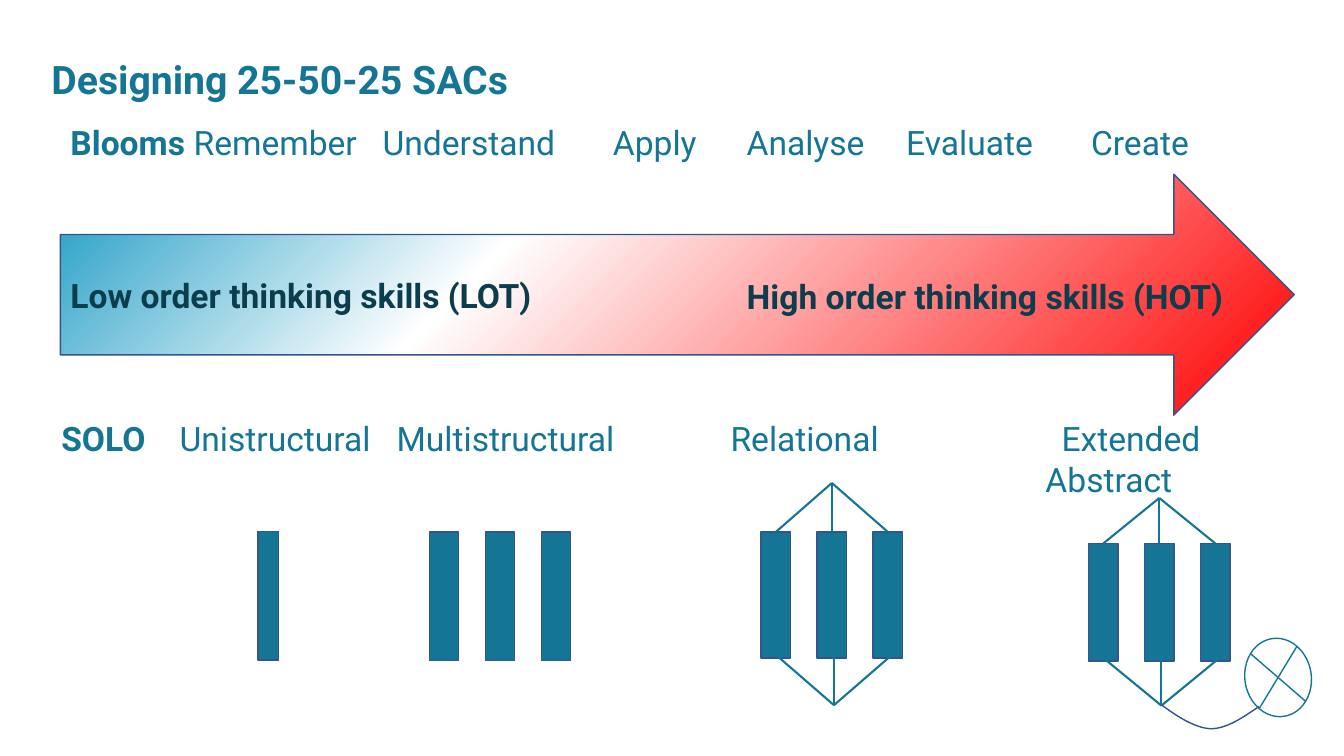
from copy import deepcopy

from lxml.etree import SubElement
from pptx import Presentation
from pptx.dml.color import RGBColor
from pptx.enum.shapes import MSO_CONNECTOR, MSO_SHAPE as SHAPE
from pptx.enum.text import MSO_ANCHOR, PP_ALIGN
from pptx.oxml.ns import qn
from pptx.util import Pt

FONT = "Roboto"
C = {"teal": "147694", "dark": "0B3D4D", "edge": "325491",
     "white": "FFFFFF", "blue": "1B9BC3", "red": "FF0000"}

TITLE = "Designing 25-50-25 SACs"
ARROW = (43.2, 124.5, 881.3, 172)
ARROW_STOPS = [(0, "blue"), (0.35, "white"), (1, "red")]
ARROW_LABELS = [("Low order thinking skills (LOT)", (43.2, 193, 371.5, 36)),
                ("High order thinking skills (HOT)", (526.3, 193.7, 380, 36))]

# Each line: bold heading, then (word, tab stop)
TAXONOMIES = [
    ((43.2, 83.5, 887, 65.5), [
        ("Blooms", [("Remember", 88), ("Understand", 223), ("Apply", 387.5),
                    ("Analyse", 483), ("Evaluate", 597), ("Create", 729)])]),
    ((36.7, 295.2, 863.3, 65.5), [
        ("SOLO", [("Unistructural", 84.5), ("Multistructural", 239.5),
                  ("Relational", 478), ("Extended", 714.5)]),
        ("", [("Abstract", 703)])]),
]

BAR_W, BAR_PITCH = 21, 40
UNISTRUCTURAL = (184.4, 379.5, 14.4, 92)
MULTISTRUCTURAL = (306.7, 380, 92)  # left, top, bar height
# left, top, bar height, apex y, foot y
LINKED = [(543.7, 380, 90, 345, 503.7), (777.6, 388.2, 84, 355.7, 504)]
FOOT_SHIFT = 1.5
TAIL = [[(899.3, 504.7), (887.8, 512.6), (876.2, 520.6), (864.7, 520.6)],
        [(864.7, 520.6), (853.2, 519.8), (841, 511.9), (829.4, 503.3)]]
TAIL_STEPS = 16
JUNCTION = (889.2, 455.8, 47.5, 56.2)


def rgb(name):
    return RGBColor.from_string(C[name])


def add_run(p, text, size=24, color="teal", bold=False):
    r = p.add_run()
    r.text = text
    r.font.name, r.font.size, r.font.bold = FONT, Pt(size), bold
    r.font.color.rgb = rgb(color)


def add_box(box):
    tf = s.shapes.add_textbox(*map(Pt, box)).text_frame
    tf.word_wrap = True
    return tf


def add_tabs(p, stops):
    tabs = SubElement(p._p.get_or_add_pPr(), qn("a:tabLst"))
    for stop in stops:
        SubElement(tabs, qn("a:tab"), pos=str(Pt(stop)), algn="l")


def outline(sp, color, width=1):
    sp.shadow.inherit = False
    sp.line.color.rgb = rgb(color)
    sp.line.width = Pt(width)


def add_bar(left, top, width, height):
    sp = s.shapes.add_shape(SHAPE.RECTANGLE, *map(Pt, (left, top, width, height)))
    sp.fill.solid()
    sp.fill.fore_color.rgb = rgb("teal")
    outline(sp, "edge")


def add_bars(left, top, height):
    """Draw three bars and return the x of their centres."""
    lefts = [left + i * BAR_PITCH for i in range(3)]
    for x in lefts:
        add_bar(x, top, BAR_W, height)
    return [x + BAR_W / 2 for x in lefts]


def add_line(x1, y1, x2, y2):
    cn = s.shapes.add_connector(MSO_CONNECTOR.STRAIGHT, *map(Pt, (x1, y1, x2, y2)))
    cn.line.color.rgb = rgb("teal")
    cn.line.width = Pt(1.5)
    SubElement(cn._element.spPr, qn("a:effectLst"))


def add_linked_bars(left, top, height, apex, foot):
    """Draw three bars joined to one point above and one below."""
    centres = add_bars(left, top, height)
    for x in centres:
        add_line(x, top, centres[1], apex)
        add_line(x + FOOT_SHIFT, top + height - 1, centres[1] + FOOT_SHIFT, foot)


def bezier(points, t):
    weights = ((1 - t) ** 3, 3 * t * (1 - t) ** 2, 3 * t ** 2 * (1 - t), t ** 3)
    return tuple(Pt(sum(w * pt[axis] for w, pt in zip(weights, points)))
                 for axis in (0, 1))


prs = Presentation()
prs.slide_width, prs.slide_height = Pt(960), Pt(540)
s = prs.slides.add_slide(prs.slide_layouts[5])

title = s.shapes.title
title.left, title.top, title.width, title.height = map(Pt, (29.5, 36, 863.3, 133.2))
title.fill.solid()
title.fill.fore_color.rgb = rgb("white")
tf = title.text_frame
tf.vertical_anchor = MSO_ANCHOR.TOP
tf.paragraphs[0].alignment = PP_ALIGN.LEFT
add_run(tf.paragraphs[0], TITLE, 28, bold=True)

arrow = s.shapes.add_shape(SHAPE.RIGHT_ARROW, *map(Pt, ARROW))
outline(arrow, "edge")
arrow.fill.gradient()
arrow.fill.gradient_angle = 315
first = arrow._element.spPr.find(".//" + qn("a:gs"))
first.addnext(deepcopy(first))
for stop, (position, color) in zip(arrow.fill.gradient_stops, ARROW_STOPS):
    stop.position = position
    stop.color.rgb = rgb(color)

for text, box in ARROW_LABELS:
    add_run(add_box(box).paragraphs[0], text, color="dark", bold=True)

for box, lines in TAXONOMIES:
    tf = add_box(box)
    for i, (heading, words) in enumerate(lines):
        p = tf.add_paragraph() if i else tf.paragraphs[0]
        add_tabs(p, [stop for _, stop in words])
        if heading:
            add_run(p, heading, bold=True)
        for word, _ in words:
            add_run(p, "\t" + word)

add_bar(*UNISTRUCTURAL)
add_bars(*MULTISTRUCTURAL)
for icon in LINKED:
    add_linked_bars(*icon)

curve = [bezier(part, i / TAIL_STEPS) for part in TAIL for i in range(TAIL_STEPS + 1)]
builder = s.shapes.build_freeform(*curve[0])
builder.add_line_segments(curve[1:], close=False)
tail = builder.convert_to_shape()
tail.fill.background()
outline(tail, "edge")

junction = s.shapes.add_shape(SHAPE.FLOWCHART_SUMMING_JUNCTION, *map(Pt, JUNCTION))
junction.rotation = 351
junction.fill.background()
outline(junction, "teal")

prs.save("out.pptx")
